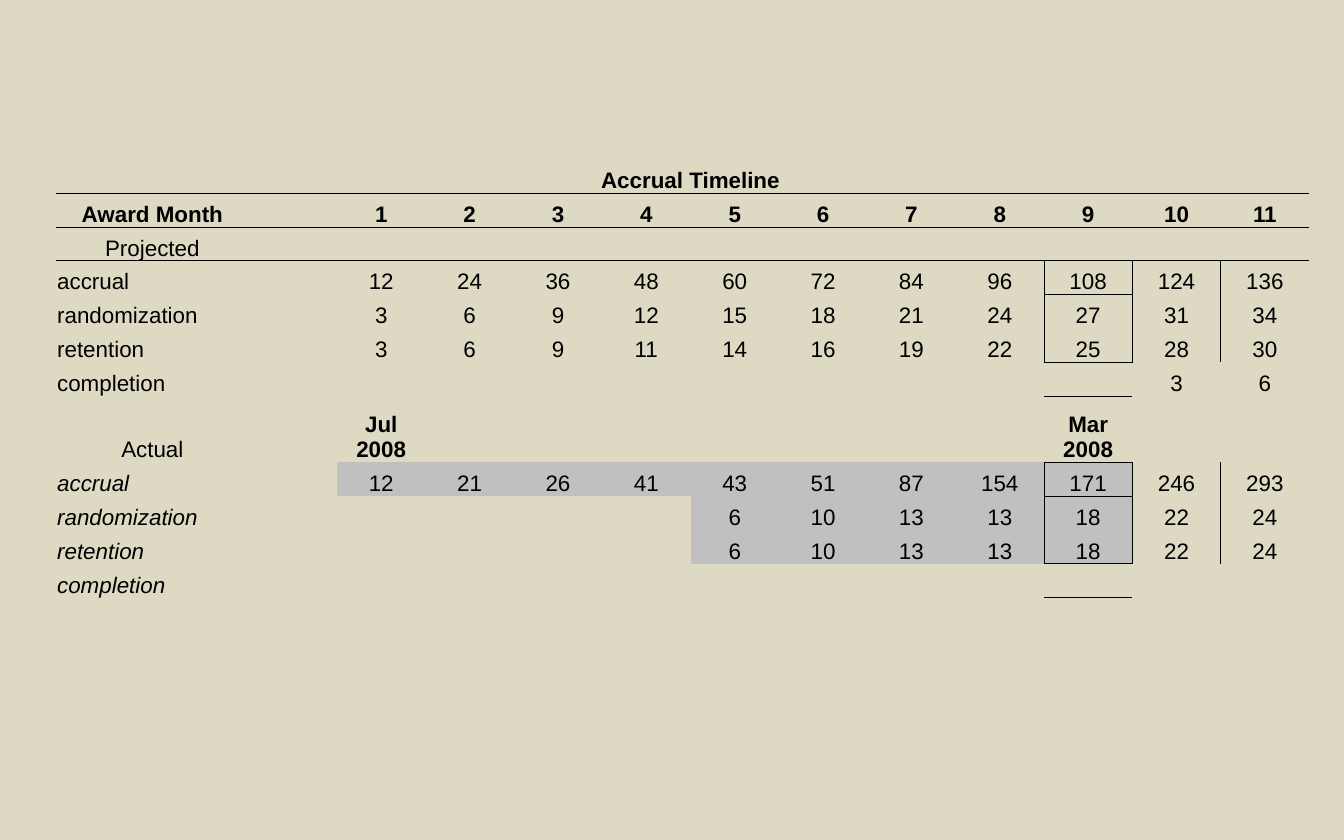
from lxml import etree
from pptx import Presentation
from pptx import util as u
from pptx.dml.color import RGBColor
from pptx.enum import text
from pptx.oxml.ns import qn

COLORS = {"background": "DDD9C3", "ink": "000000", "shade": "C0C0C0"}
FONT, SIZE = "Arial", u.Pt(12)
NO_STYLE = "{2D5ABB26-0587-4C30-8999-92F81FD0307C}"

TITLE = "Accrual Timeline"
MONTHS = list(range(1, 12))
PROJECTED = [
    ("accrual", [12, 24, 36, 48, 60, 72, 84, 96, 108, 124, 136]),
    ("randomization", [3, 6, 9, 12, 15, 18, 21, 24, 27, 31, 34]),
    ("retention", [3, 6, 9, 11, 14, 16, 19, 22, 25, 28, 30]),
    ("completion", [""] * 9 + [3, 6]),
]
ACTUAL = [
    ("accrual", [12, 21, 26, 41, 43, 51, 87, 154, 171, 246, 293]),
    ("randomization", [""] * 4 + [6, 10, 13, 13, 18, 22, 24]),
    ("retention", [""] * 4 + [6, 10, 13, 13, 18, 22, 24]),
    ("completion", [""] * 11),
]
DATES = ["Jul 2008"] + [""] * 7 + ["Mar 2008"] + [""] * 2
BLANK = ("", [""] * 11)
ROWS = [
    ("", ["", "", TITLE] + [""] * 8),
    ("Award Month", MONTHS),
    ("Projected", [""] * 11),
    *PROJECTED,
    ("Actual", DATES),
    *ACTUAL,
    BLANK,
]
TITLE_ROW, HEADER_ROW, PROJECTED_ROW, ACTUAL_ROW = 0, 1, 2, 7
FIRST_MONTH, CURRENT_MONTH, COLS = 2, 10, 13
HEIGHTS = {TITLE_ROW: 1.19, ACTUAL_ROW: 1.25}
BOXES = [(3, 5), (8, 10)]


def rgb(name):
    return RGBColor.from_string(COLORS[name])


def find_borders():
    borders = set()
    for c in range(COLS):
        borders |= {(TITLE_ROW, c, "B"), (HEADER_ROW, c, "T"),
                    (HEADER_ROW, c, "B"), (PROJECTED_ROW, c, "T")}
    for top, bottom in BOXES:
        c = CURRENT_MONTH
        borders |= {(top - 1, c, "B"), (top, c, "T"), (bottom, c, "B"), (bottom + 1, c, "T")}
        for r in range(top, bottom + 1):
            borders |= {(r, c - 1, "R"), (r, c, "L"), (r, c, "R"), (r, c + 1, "L")}
    return borders


def add_border(cell, side):
    ln = etree.SubElement(cell._tc.get_or_add_tcPr(), qn(f"a:ln{side}"), w=str(u.Pt(0.5)))
    fill = etree.SubElement(ln, qn("a:solidFill"))
    etree.SubElement(fill, qn("a:srgbClr"), val=COLORS["ink"])


def write(cell, value, bold, italic, align):
    cell.vertical_anchor = text.MSO_ANCHOR.BOTTOM
    cell.margin_left = cell.margin_right = cell.margin_top = u.Cm(0.02)
    cell.margin_bottom = 0
    p = cell.text_frame.paragraphs[0]
    p.text = str(value)
    p.alignment = align
    for r in p.runs:
        r.font.name, r.font.size = FONT, SIZE
        r.font.bold, r.font.italic = bold, italic
        r.font.color.rgb = rgb("ink")
    if not p.runs:
        etree.SubElement(p._p, qn("a:endParaRPr"), sz=str(int(SIZE.pt * 100)))


prs = Presentation()
prs.slide_width, prs.slide_height = u.Cm(25.4), u.Cm(15.88)
s = prs.slides.add_slide(prs.slide_layouts[6])
s.background.fill.solid()
s.background.fill.fore_color.rgb = rgb("background")

widths = [3.64] + [1.67] * (COLS - 1)
heights = [HEIGHTS.get(r, 0.64) for r in range(len(ROWS))]
frame = s.shapes.add_table(len(ROWS), COLS, u.Cm(1.06), u.Cm(2.46),
                           u.Cm(sum(widths)), u.Cm(sum(heights)))
table = frame.table
table.first_row = table.horz_banding = False
table._tbl.tblPr.find(qn("a:tableStyleId")).text = NO_STYLE
for column, width in zip(table.columns, widths):
    column.width = u.Cm(width)
for row, height in zip(table.rows, heights):
    row.height = u.Cm(height)
table.cell(TITLE_ROW, 4).merge(table.cell(TITLE_ROW, 7))

borders = find_borders()
for r, (label, values) in enumerate(ROWS):
    is_group = r in (HEADER_ROW, PROJECTED_ROW, ACTUAL_ROW)
    for c, value in enumerate([label, ""] + values):
        cell = table.cell(r, c)
        is_label = c == 0
        bold = r <= HEADER_ROW or (r == ACTUAL_ROW and not is_label)
        italic = is_label and r > ACTUAL_ROW
        align = text.PP_ALIGN.LEFT if is_label and not is_group else text.PP_ALIGN.CENTER
        write(cell, value, bold, italic, align)
        for side in "LRTB":
            if (r, c, side) in borders:
                add_border(cell, side)
        if r > ACTUAL_ROW and FIRST_MONTH <= c <= CURRENT_MONTH and value != "":
            cell.fill.solid()
            cell.fill.fore_color.rgb = rgb("shade")
        else:
            cell.fill.background()

prs.save("out.pptx")
